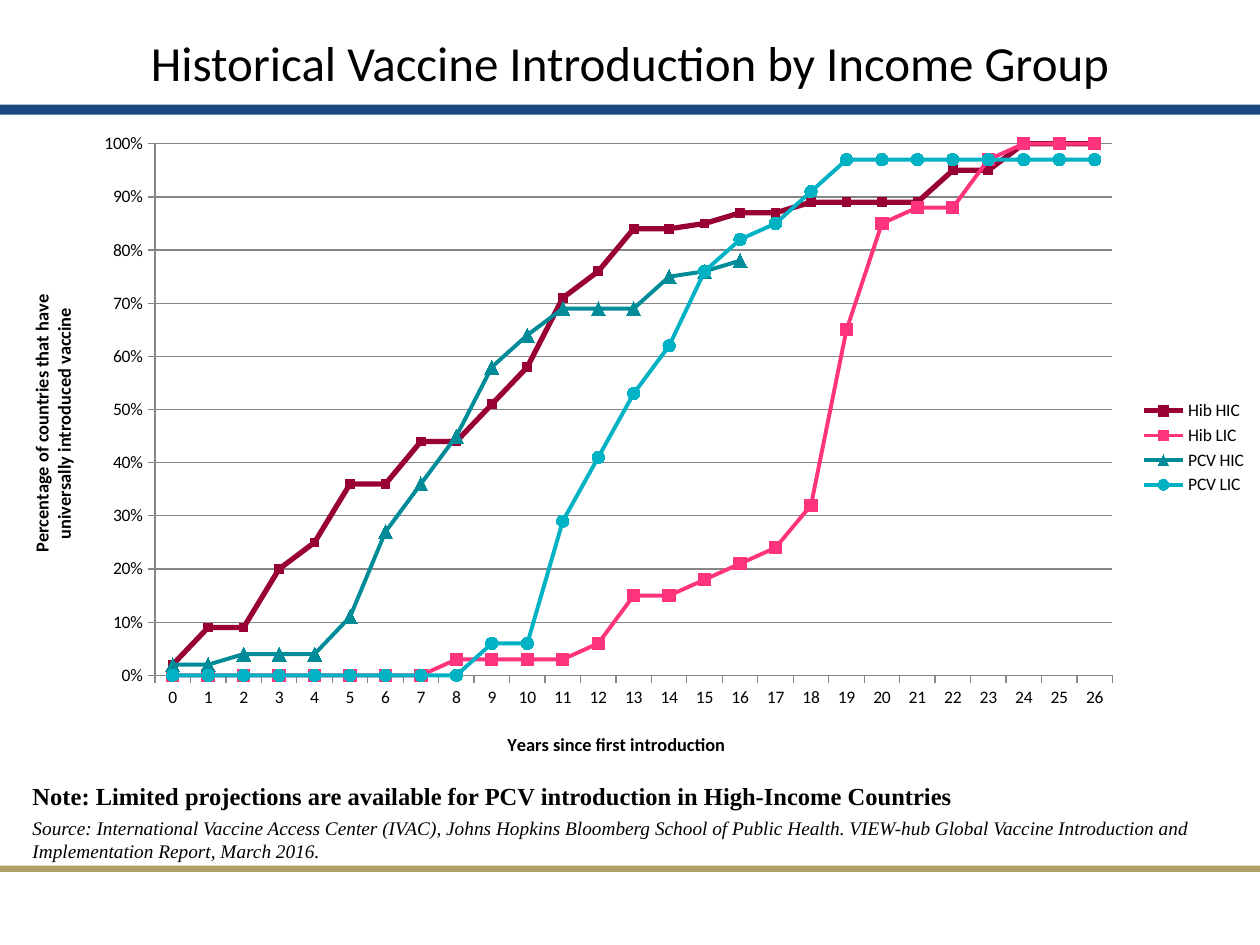
from dataclasses import dataclass
from typing import Optional

from lxml import etree
from pptx import Presentation
from pptx.chart import data as cd
from pptx.dml import color as col
from pptx.enum import chart as ec, shapes, text
from pptx.oxml import ns
from pptx.util import Inches, Pt


@dataclass(frozen=True)
class Theme:
    sans: str = "Calibri"
    serif: str = "Times New Roman"
    ink: str = "000000"
    blue: str = "1C4982"
    gold: str = "847013"
    grid: str = "868686"
    head: float = 28
    note: float = 14
    cite: float = 11
    label: float = 10.5
    tick: float = 10


@dataclass(frozen=True)
class Curve:
    name: str
    hue: str
    mark: ec.XL_MARKER_STYLE
    size: int
    vals: list
    width: Optional[float] = None


T = Theme()
M = ec.XL_MARKER_STYLE
YEARS = 27
CURVES = [
    Curve("Hib HIC", "990033", M.AUTOMATIC, 5,
          [.02, .09, .09, .2, .25, .36, .36, .44, .44, .51, .58, .71, .76, .84, .84,
           .85, .87, .87] + [.89] * 4 + [.95] * 2 + [1] * 3, 3),
    Curve("Hib LIC", "FF347D", M.SQUARE, 7,
          [0] * 8 + [.03] * 4 + [.06, .15, .15, .18, .21, .24, .32, .65, .85, .88, .88,
                                 .97, 1, 1, 1]),
    Curve("PCV HIC", "008B98", M.TRIANGLE, 8,
          [.02, .02, .04, .04, .04, .11, .27, .36, .45, .58, .64, .69, .69, .69, .75,
           .76, .78] + [None] * 10),
    Curve("PCV LIC", "00B2C4", M.CIRCLE, 7,
          [0] * 9 + [.06, .06, .29, .41, .53, .62, .76, .82, .85, .91] + [.97] * 8),
]


def rgb(code: str) -> col.RGBColor:
    return col.RGBColor.from_string(code)


def style(font, *, size: float, face: str = T.sans, bold: bool = False,
          ital: bool = False) -> None:
    font.name, font.size, font.bold, font.italic = face, Pt(size), bold, ital
    font.color.rgb = rgb(T.ink)


def write(slide, words: str, box: tuple, *, align=text.PP_ALIGN.LEFT,
          anchor=text.MSO_ANCHOR.TOP, **fmt) -> None:
    frame = slide.shapes.add_textbox(*map(Inches, box)).text_frame
    frame.word_wrap = True
    frame.vertical_anchor = anchor
    par = frame.paragraphs[0]
    par.alignment = align
    run = par.add_run()
    run.text = words
    style(run.font, **fmt)


def band(slide, top: float, high: float, hue: str, alpha: int = 100) -> None:
    bar = slide.shapes.add_shape(shapes.MSO_SHAPE.RECTANGLE, 0, Inches(top),
                                 Inches(10), Inches(high))
    bar.shadow.inherit = False
    bar.fill.solid()
    bar.fill.fore_color.rgb = rgb(hue)
    bar.line.fill.background()
    if alpha < 100:
        tint = bar.fill._xPr.find(".//" + ns.qn("a:srgbClr"))
        etree.SubElement(tint, ns.qn("a:alpha"), val=str(alpha * 1000))


def place(node, spot: int, **dims) -> None:
    for old in node.findall(ns.qn("c:layout")):
        node.remove(old)
    lay = etree.Element(ns.qn("c:layout"))
    man = etree.SubElement(lay, ns.qn("c:manualLayout"))
    for key, val in dims.items():
        etree.SubElement(man, ns.qn("c:" + key), val=str(val))
    node.insert(spot, lay)


def name_axis(axis, words: str, x: float, y: float) -> None:
    axis.major_tick_mark = ec.XL_TICK_MARK.OUTSIDE
    axis.minor_tick_mark = ec.XL_TICK_MARK.NONE
    axis.format.line.color.rgb = rgb(T.grid)
    style(axis.tick_labels.font, size=T.tick)
    title = axis.axis_title
    title.text_frame.text = words
    for par in title.text_frame.paragraphs:
        for run in par.runs:
            style(run.font, size=T.label, bold=True)
    place(title._element, 1, xMode="edge", yMode="edge", x=x, y=y)


def draw_curve(line, curve: Curve) -> None:
    line.smooth = False
    line.format.line.color.rgb = rgb(curve.hue)
    if curve.width:
        line.format.line.width = Pt(curve.width)
    mark = line.marker
    mark.style, mark.size = curve.mark, curve.size
    mark.format.fill.solid()
    mark.format.fill.fore_color.rgb = rgb(curve.hue)
    mark.format.line.color.rgb = rgb(curve.hue)


def draw_chart(slide) -> None:
    data = cd.CategoryChartData(number_format="0%")
    data.categories = [str(year) for year in range(YEARS)]
    for curve in CURVES:
        data.add_series(curve.name, curve.vals)
    chart = slide.shapes.add_chart(
        ec.XL_CHART_TYPE.LINE_MARKERS, 0, Inches(0.96), Inches(10), Inches(5.19),
        data).chart
    style(chart.font, size=T.tick)
    chart.has_title = False
    chart.has_legend = True
    chart.legend.position = ec.XL_LEGEND_POSITION.RIGHT
    chart.legend.include_in_layout = False
    style(chart.legend.font, size=T.tick)
    plot = chart.plots[0]
    plot.vary_by_categories = False
    for line, curve in zip(plot.series, CURVES):
        draw_curve(line, curve)
    name_axis(chart.category_axis, "Years since first introduction", 0.4, 0.93)
    axis = chart.value_axis
    name_axis(axis, "Percentage of countries that have\nuniversally introduced vaccine",
              0.02, 0.26)
    axis.minimum_scale, axis.maximum_scale, axis.major_unit = 0, 1, 0.1
    axis.tick_labels.number_format = "0%"
    axis.tick_labels.number_format_is_linked = False
    axis.has_major_gridlines = True
    axis.major_gridlines.format.line.color.rgb = rgb(T.grid)
    area = chart._chartSpace.find(".//" + ns.qn("c:plotArea"))
    place(area, 0, layoutTarget="inner", xMode="edge", yMode="edge",
          x=0.123, y=0.035, w=0.76, h=0.813)


def main() -> None:
    """Build the vaccine introduction slide."""
    deck = Presentation()
    deck.slide_width, deck.slide_height = Inches(10), Inches(7.5)
    slide = deck.slides.add_slide(deck.slide_layouts[6])
    band(slide, 0.83, 0.08, T.blue)
    band(slide, 6.87, 0.05, T.gold, 65)
    write(slide, "Historical Vaccine Introduction by Income Group", (0, 0.16, 10, 0.67),
          align=text.PP_ALIGN.CENTER, anchor=text.MSO_ANCHOR.MIDDLE, size=T.head)
    write(slide, "Source: International Vaccine Access Center (IVAC), Johns Hopkins "
          "Bloomberg School of Public Health. VIEW-hub Global Vaccine Introduction and "
          "Implementation Report, March 2016.", (0.16, 6.43, 9.74, 0.47),
          size=T.cite, face=T.serif, ital=True)
    write(slide, "Note: Limited projections are available for PCV introduction in "
          "High-Income Countries", (0.16, 6.15, 8.14, 0.34),
          size=T.note, face=T.serif, bold=True)
    draw_chart(slide)
    deck.save("out.pptx")


if __name__ == "__main__":
    main()
